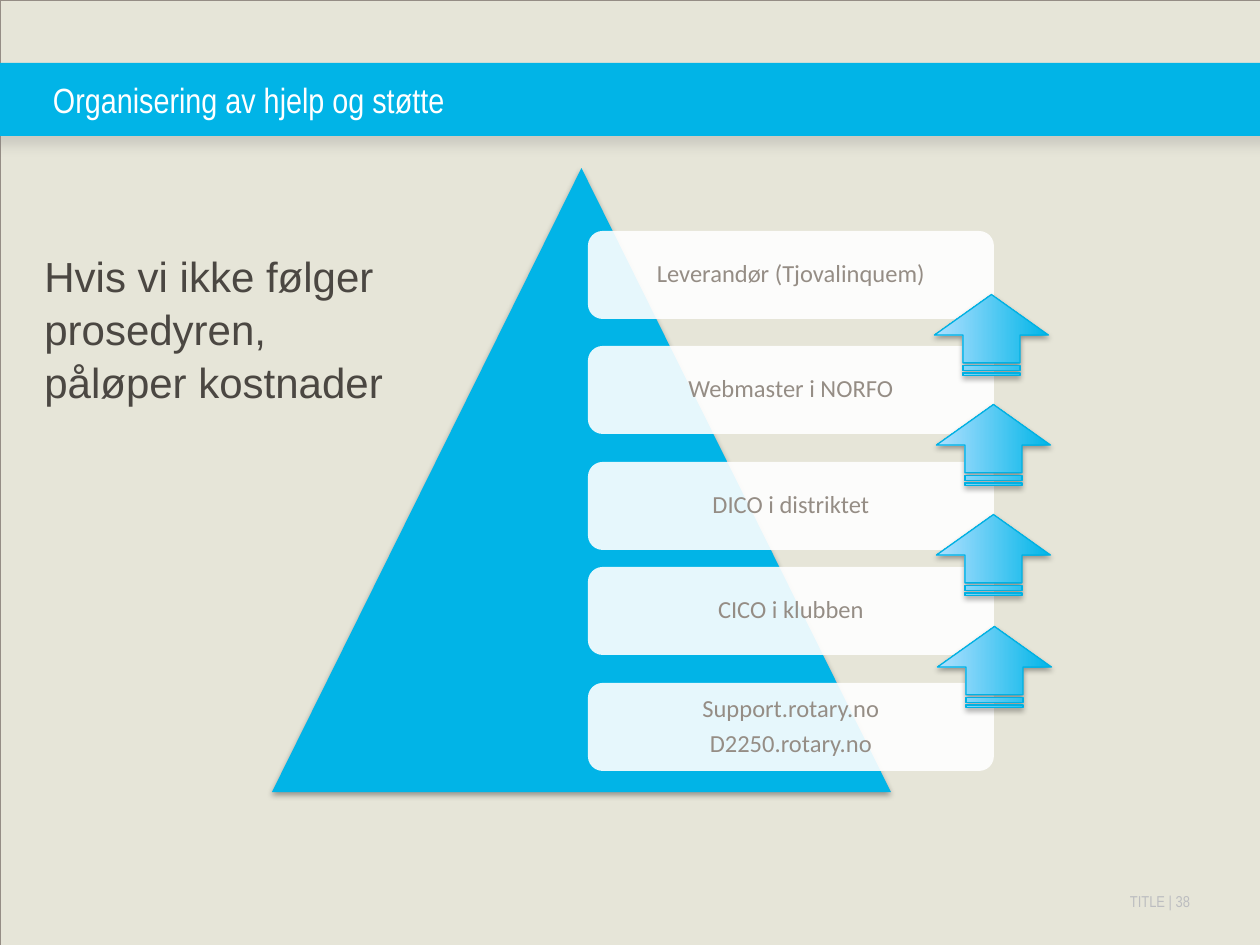
from typing import NamedTuple

from lxml.etree import SubElement
from pptx import Presentation
from pptx.dml.color import RGBColor
from pptx.enum.shapes import MSO_SHAPE
from pptx.enum.text import MSO_ANCHOR, MSO_AUTO_SIZE, PP_ALIGN
from pptx.oxml.ns import qn
from pptx.util import Emu, Pt

PX_PER_INCH = 126
BLUE = "01B4E7"
GREY = "958D85"
WHITE = "FFFFFF"


class Box(NamedTuple):
    left: int
    top: int
    width: int
    height: int


class Shadow(NamedTuple):
    color: str
    opacity: int
    blur: float
    distance: float


class Level(NamedTuple):
    top: int
    lines: tuple[str, ...]


BAR_SHADOW = Shadow("808080", 25, 7, 4.8)
SOFT_SHADOW = Shadow("000000", 35, 3.1, 1.8)
LEVELS = [
    Level(231, ("Leverandør (Tjovalinquem)",)),
    Level(346, ("Webmaster i NORFO",)),
    Level(462, ("DICO i distriktet",)),
    Level(567, ("CICO i klubben",)),
    Level(683, ("Support.rotary.no", "D2250.rotary.no")),
]
# Left and top of each arrow before it is turned upwards
ARROWS = [(951, 278), (953, 388), (953, 498), (954, 610)]


def px(length: int) -> Emu:
    return Emu(round(length * 914400 / PX_PER_INCH))


def rgb(color: str) -> RGBColor:
    return RGBColor.from_string(color)


def place(box: Box) -> list[Emu]:
    return [px(length) for length in box]


def add_shadow(shape, shadow: Shadow) -> None:
    """Give the shape a shadow that falls straight down."""
    effects = shape._element.spPr.find(qn("a:effectLst"))
    outer = SubElement(effects, qn("a:outerShdw"), blurRad=str(Pt(shadow.blur)),
                       dist=str(Pt(shadow.distance)), dir="5400000", rotWithShape="0")
    color = SubElement(outer, qn("a:srgbClr"), val=shadow.color)
    SubElement(color, qn("a:alpha"), val=str(shadow.opacity * 1000))


def add_shape(slide, kind: MSO_SHAPE, box: Box, fill: str | None = None,
              shadow: Shadow | None = None):
    shape = slide.shapes.add_shape(kind, *place(box))
    shape.line.fill.background()
    if fill:
        shape.fill.solid()
        shape.fill.fore_color.rgb = rgb(fill)
    else:
        shape.fill.background()
    shape.shadow.inherit = False
    if shadow:
        add_shadow(shape, shadow)
    return shape


def set_margins(frame, margin: int) -> None:
    frame.margin_left = frame.margin_right = px(margin)
    frame.margin_top = frame.margin_bottom = px(margin)


def style(paragraph, font: str, size: int, color: str, alignment: PP_ALIGN) -> None:
    paragraph.alignment = alignment
    paragraph.font.name = font
    paragraph.font.size = Pt(size)
    paragraph.font.color.rgb = rgb(color)


def add_text(slide, box: Box, text: str):
    frame = slide.shapes.add_textbox(*place(box)).text_frame
    frame.word_wrap = True
    frame.text = text
    return frame


def add_card(slide, level: Level) -> None:
    card = add_shape(slide, MSO_SHAPE.ROUNDED_RECTANGLE, Box(588, level.top, 406, 88), WHITE)
    color = card._element.spPr.find(f"{qn('a:solidFill')}/{qn('a:srgbClr')}")
    SubElement(color, qn("a:alpha"), val="90000")
    frame = card.text_frame
    frame.word_wrap = True
    frame.vertical_anchor = MSO_ANCHOR.MIDDLE
    set_margins(frame, 8)
    frame.text = "\n".join(level.lines)
    for paragraph in frame.paragraphs:
        paragraph.line_spacing = 0.9
        paragraph.space_after = Pt(4.9)
        style(paragraph, "Calibri", 14, GREY, PP_ALIGN.CENTER)


def add_arrow(slide, left: int, top: int) -> None:
    arrow = add_shape(slide, MSO_SHAPE.STRIPED_RIGHT_ARROW, Box(left, top, 81, 114),
                      shadow=SOFT_SHADOW)
    arrow.rotation = 270
    arrow.fill.gradient()
    arrow.fill.gradient_angle = 90
    for stop, color in zip(arrow.fill.gradient_stops, ("00B5E8", "B1E0FF")):
        stop.color.rgb = rgb(color)
    arrow.line.color.rgb = rgb("00B1E3")
    arrow.line.width = Pt(0.75)


def add_title(slide, text: str) -> None:
    title = slide.shapes.title
    title.left, title.top, title.width, title.height = place(Box(53, 63, 1207, 73))
    frame = title.text_frame
    frame.text = text
    frame.auto_size = MSO_AUTO_SIZE.NONE
    frame.vertical_anchor = MSO_ANCHOR.MIDDLE
    set_margins(frame, 0)
    style(frame.paragraphs[0], "Arial Narrow", 20, WHITE, PP_ALIGN.LEFT)
    slide.shapes._spTree.append(title._element)  # in front of the bar


def main() -> None:
    presentation = Presentation()
    presentation.slide_width, presentation.slide_height = px(1260), px(945)
    slide = presentation.slides.add_slide(presentation.slide_layouts[5])
    slide.background.fill.solid()
    slide.background.fill.fore_color.rgb = rgb("E6E5D8")

    footer = add_text(slide, Box(987, 892, 203, 19), "TITLE | 38")
    set_margins(footer, 0)
    style(footer.paragraphs[0], "Arial Narrow", 9, "BCBDC0", PP_ALIGN.RIGHT)

    border = add_shape(slide, MSO_SHAPE.RECTANGLE, Box(0, 0, 1260, 945))
    border.line.color.rgb = rgb(GREY)
    border.line.width = Pt(0.13)

    add_shape(slide, MSO_SHAPE.RECTANGLE, Box(-10, 63, 1281, 73), BLUE, BAR_SHADOW)
    add_title(slide, "Organisering av hjelp og støtte")

    add_shape(slide, MSO_SHAPE.ISOSCELES_TRIANGLE, Box(272, 168, 619, 624), BLUE, SOFT_SHADOW)
    for level in LEVELS:
        add_card(slide, level)

    message = add_text(slide, Box(32, 242, 388, 165),
                       "Hvis vi ikke følger prosedyren, påløper kostnader")
    message.paragraphs[0].line_spacing = 1.05
    style(message.paragraphs[0], "Arial", 24, "4B4742", PP_ALIGN.LEFT)

    for left, top in ARROWS:
        add_arrow(slide, left, top)

    presentation.save("out.pptx")


if __name__ == "__main__":
    main()
